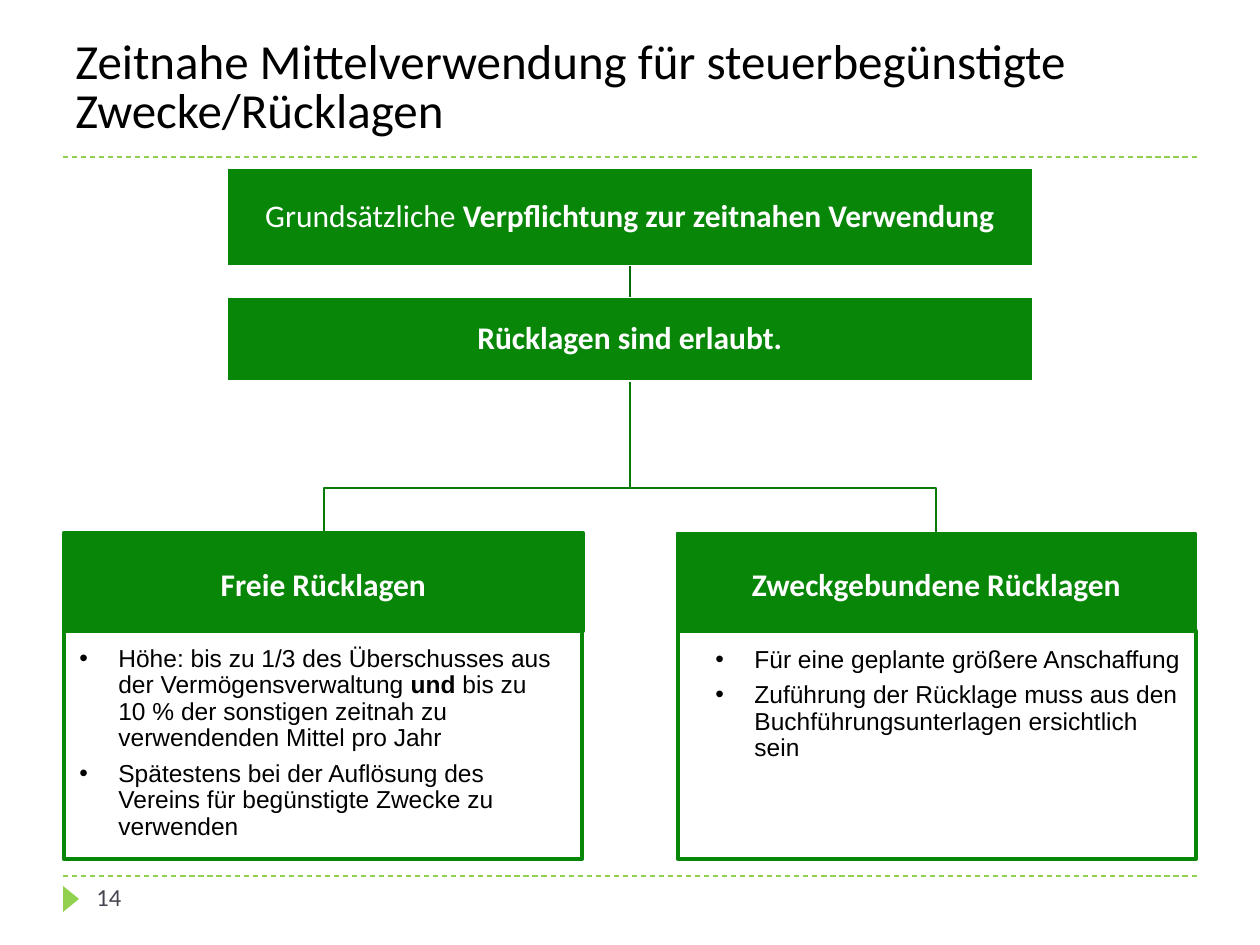
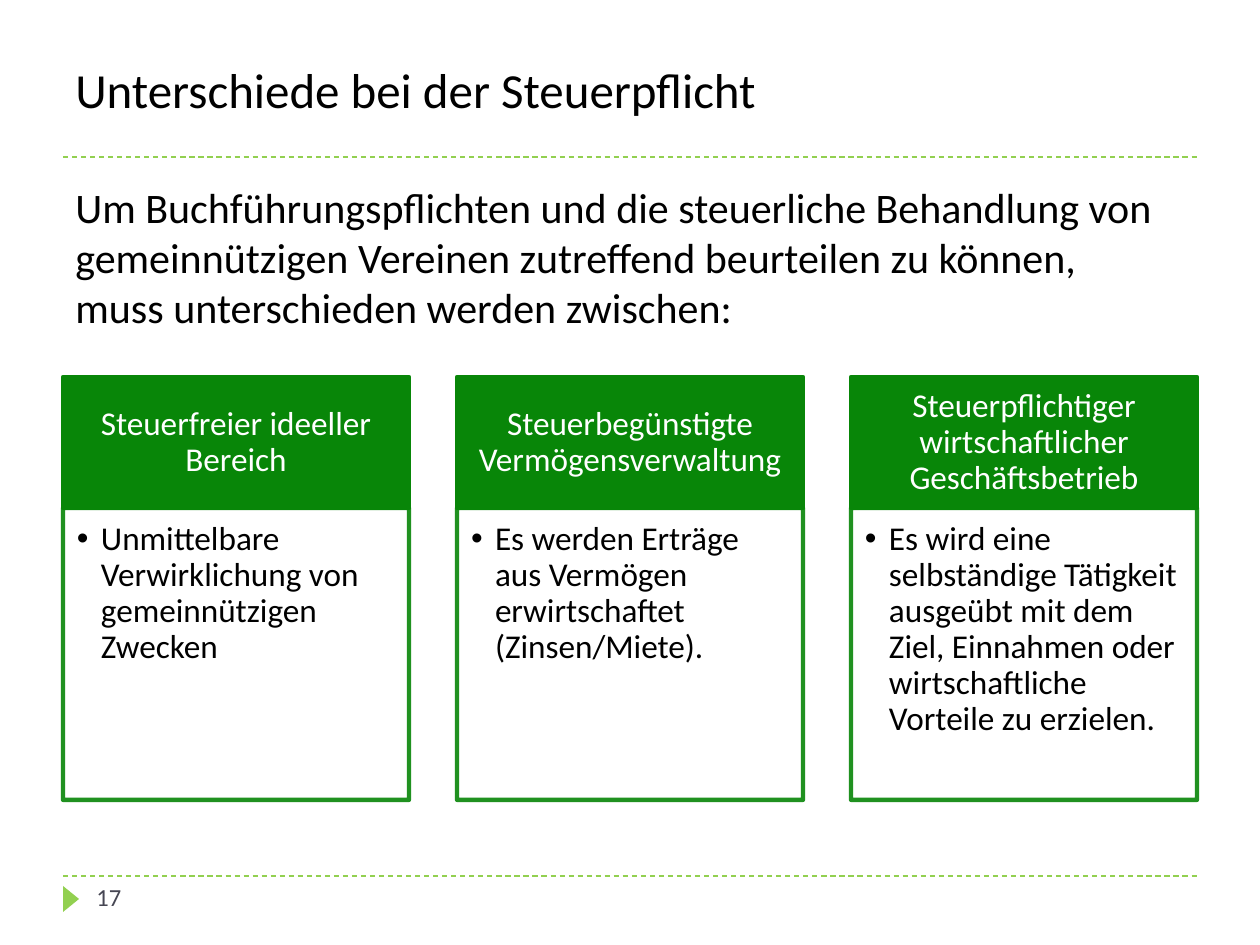
import copy

import lxml.etree
import pptx
import pptx.dml.color
import pptx.enum.dml
import pptx.enum.shapes
import pptx.enum.text
import pptx.oxml.ns
import pptx.shapes.connector
import pptx.util

SCALE = 914400 / 126  # EMU in one px
GREEN, LIME, WHITE, BLACK = "088608", "92D050", "FFFFFF", "000000"
KIND = pptx.enum.shapes.MSO_SHAPE
LINK = pptx.enum.shapes.MSO_CONNECTOR.STRAIGHT
MID = pptx.enum.text.MSO_ANCHOR.MIDDLE
MITTE = pptx.enum.text.PP_ALIGN.CENTER
qn = pptx.oxml.ns.qn
Pt = pptx.util.Pt


def hue(code):
    return pptx.dml.color.RGBColor.from_string(code)


def box(slide, at, paras=(), look=None, fill=None, line=None, width=2.5):
    """Add a rectangle, or a text box if it has neither fill nor line."""
    look = look or {}
    at = [round(v * SCALE) for v in at]
    if fill or line:
        shape = slide.shapes.add_shape(KIND.RECTANGLE, *at)
        shape.shadow.inherit = False
        if fill:
            shape.fill.solid()
            shape.fill.fore_color.rgb = hue(fill)
        else:
            shape.fill.background()
        shape.line.color.rgb = hue(line)
        shape.line.width = Pt(width)
    else:
        shape = slide.shapes.add_textbox(*at)
    frame = shape.text_frame
    frame.word_wrap = True
    for key, val in look.get("frame", {}).items():
        setattr(frame, key, val)
    for i, runs in enumerate(paras):
        para = frame.paragraphs[0] if i == 0 else frame.add_paragraph()
        for key, val in look.get("para", {}).items():
            setattr(para, key, val)
        if "indent" in look:
            left, hang = (round(v * SCALE) for v in look["indent"])
            props = para._p.get_or_add_pPr()
            props.set("marL", str(left))
            props.set("indent", str(-hang))
            face = lxml.etree.SubElement(props, qn("a:buFont"))
            face.set("typeface", "Arial")
            lxml.etree.SubElement(props, qn("a:buChar")).set("char", "•")
        for text, bold in runs:
            if text == "\n":
                para.add_line_break()
                para._p[-1].append(copy.deepcopy(run._r.rPr))
                continue
            run = para.add_run()
            run.text = text
            run.font.bold = bold
            run.font.color.rgb = hue(look["ink"])
            for key, val in look["font"].items():
                setattr(run.font, key, val)
    return shape


deck = pptx.Presentation()
deck.slide_width = round(1260 * SCALE)
deck.slide_height = round(945 * SCALE)

# Shared text looks
slim = {"margin_left": 9144, "margin_top": 9144,
        "margin_right": 9144, "margin_bottom": 9144}
tight = {"alignment": MITTE, "line_spacing": 0.9}
title = {"frame": {"vertical_anchor": MID}, "ink": BLACK,
         "font": {"name": "Calibri", "size": Pt(28)}}
number = {"ink": "464653", "font": {"name": "Calibri", "size": Pt(14)}}
bar = {"frame": {**slim, "vertical_anchor": MID}, "para": tight,
       "ink": WHITE, "font": {"name": "Calibri", "size": Pt(18)}}
top = pptx.enum.text.MSO_ANCHOR.TOP
head = {**bar, "frame": {**slim, "vertical_anchor": top,
                         "margin_top": round(36 * SCALE)}}
points = {"para": {"line_spacing": 0.9, "space_after": Pt(5)},
          "ink": BLACK, "font": {"name": "Arial", "size": Pt(14)}}

# Titles, rules and page numbers
slides = []
for words, page, space in (
        ("Zeitnahe Mittelverwendung für steuerbegünstigte Zwecke/Rücklagen",
         "14", Pt(28)),
        ("Unterschiede bei der Steuerpflicht", "17", 1.0)):
    slide = deck.slides.add_slide(deck.slide_layouts[6])
    slides.append(slide)
    for y in (876, 157):
        rule = slide.shapes.add_connector(
            LINK, *(round(v * SCALE) for v in (63, y, 1197, y)))
        rule.line.color.rgb = hue(LIME)
        rule.line.width = Pt(0.75)
        rule.line.dash_style = pptx.enum.dml.MSO_LINE.DASH
    mark = slide.shapes.add_shape(
        KIND.ISOSCELES_TRIANGLE, *(round(v * SCALE) for v in (58, 891, 26, 16)))
    mark.rotation = 90
    mark.shadow.inherit = False
    mark.fill.solid()
    mark.fill.fore_color.rgb = hue(LIME)
    mark.line.fill.background()
    box(slide, (63, 21, 1134, 136), [[(words, False)]],
        {**title, "para": {"line_spacing": space}})
    box(slide, (84, 876, 273, 50), [[(page, False)]], number)

# Slide 1: branches down to the two cards
first, second = slides
for x in (936, 324):
    pen = first.shapes.build_freeform(630, 381, scale=SCALE)
    pen.add_line_segments([(630, 488), (x, 488), (x, 533)], close=False)
    branch = pen.convert_to_shape()
    branch.shadow.inherit = False
    branch.fill.background()
    branch.line.color.rgb = hue("077A07")
    branch.line.width = Pt(1.5)

# Two bars and the stem between them
duty = box(first, (227, 168, 806, 98),
           [[("Grundsätzliche ", False),
             ("Verpflichtung zur zeitnahen Verwendung", True)]],
           bar, GREEN, WHITE, 1.5)
allow = box(first, (227, 297, 806, 84), [[("Rücklagen sind erlaubt.", True)]],
            bar, GREEN, WHITE, 1.5)
stem = first.shapes.add_connector(LINK, 0, 0, 0, 0)
stem.begin_connect(duty, 2)
stem.end_connect(allow, 0)
stem.line.color.rgb = hue("066B06")
stem.line.width = Pt(1.5)

# Cards with their points
free = [[("Höhe: bis zu 1/3 des Überschusses aus der Vermögensverwaltung ", False),
         ("und", True), (" bis zu ", False), ("\n", False),
         ("10 % der sonstigen zeitnah zu verwendenden Mittel pro Jahr", False)],
        [("Spätestens bei der Auflösung des Vereins für begünstigte "
          "Zwecke zu verwenden", False)]]
bound = [[("Für eine geplante größere Anschaffung", False)],
         [("Zuführung der Rücklage muss aus den Buchführungsunterlagen "
           "ersichtlich sein", False)]]
for name, x, edge, width, items, at, left in (
        ("Freie Rücklagen", 64, 64, 2.5, free, (67, 640, 518, 184), 39),
        ("Zweckgebundene Rücklagen", 677, 678, 1.5, bound,
         (678, 641, 522, 130), 64)):
    box(first, (edge, 631, 518, 228), line=GREEN)
    box(first, (x, 533, 519, 98), [[(name, True)]], head, GREEN, GREEN, width)
    box(first, at, items, {**points, "indent": (left, 39)})

# Slide 2: lead text
box(second, (63, 175, 1123, 165),
    [[("Um Buchführungspflichten und die steuerliche Behandlung von "
       "gemeinnützigen Vereinen zutreffend beurteilen zu können, "
       "muss unterschieden werden zwischen:", False)]],
    {"ink": BLACK, "font": {"name": "Calibri", "size": Pt(24)}})

# Three columns
large = {"name": "Calibri", "size": Pt(19)}
crown = {"frame": {"vertical_anchor": MID}, "para": tight,
         "ink": WHITE, "font": large}
body = {"frame": {"vertical_anchor": top},
        "para": {"alignment": pptx.enum.text.PP_ALIGN.LEFT,
                 "line_spacing": 0.9, "space_after": Pt(3)},
        "ink": BLACK, "font": large, "indent": (24, 24)}
for look, sides in ((crown, (19, 10, 19, 10)), (body, (14, 14, 19, 21))):
    for side, gap in zip(("left", "top", "right", "bottom"), sides):
        look["frame"]["margin_" + side] = round(gap * SCALE)
for i, (name, words) in enumerate((
        ("Steuerfreier ideeller Bereich",
         "Unmittelbare Verwirklichung von gemeinnützigen Zwecken"),
        ("Steuerbegünstigte Vermögensverwaltung",
         "Es werden Erträge aus Vermögen erwirtschaftet (Zinsen/Miete)."),
        ("Steuerpflichtiger wirtschaftlicher Geschäftsbetrieb",
         "Es wird eine selbständige Tätigkeit ausgeübt mit dem Ziel, "
         "Einnahmen oder wirtschaftliche Vorteile zu erzielen."))):
    x = 63 + 394 * i
    box(second, (x, 377, 346, 131), [[(name, False)]], crown, GREEN, GREEN)
    card = box(second, (x, 508, 346, 292), [[(words, False)]], body, line=GREEN)
    tint = card.line._ln.find(".//" + qn("a:srgbClr"))
    lxml.etree.SubElement(tint, qn("a:alpha")).set("val", "90000")

# Connectors without shadow
for slide in slides:
    for shape in slide.shapes:
        if isinstance(shape, pptx.shapes.connector.Connector):
            lxml.etree.SubElement(shape._element.spPr, qn("a:effectLst"))

deck.save("out.pptx")
